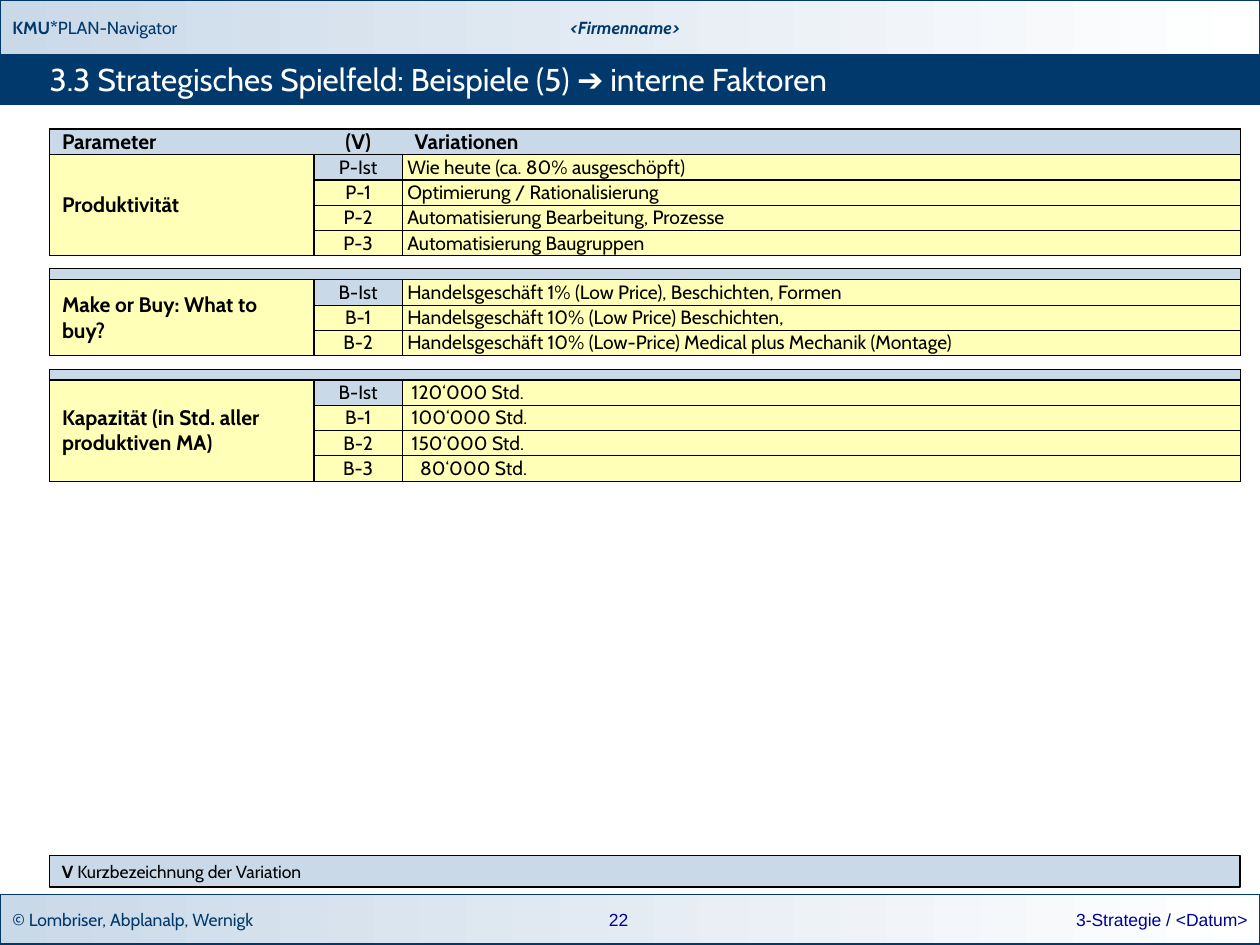
from dataclasses import dataclass
from typing import Optional

from lxml.etree import SubElement
from pptx import Presentation
from pptx.dml.color import RGBColor
from pptx.enum.shapes import MSO_SHAPE as Shape
from pptx.enum.text import MSO_ANCHOR as Anchor, PP_ALIGN as Align
from pptx.oxml.ns import qn
from pptx.util import Cm, Pt

NAVY = RGBColor(0x01, 0x39, 0x6C)
BLUE = RGBColor(0x00, 0x00, 0x99)
PALE = RGBColor(0xCA, 0xD9, 0xE8)
CREAM = RGBColor(0xFF, 0xFF, 0xB7)
BLACK = RGBColor(0, 0, 0)
WHITE = RGBColor(255, 255, 255)

WIDE, TALL = 25.4, 19.05
LEFT, COLS = 1.0, (5.33, 1.78, 16.89)
ROW, THIN, GAP = 0.51, 0.22, 0.27
PAD, TIGHT = 0.25, 0.1


@dataclass
class Box:
    left: float
    top: float
    width: float
    height: float


@dataclass
class Item:
    code: str
    text: str
    indent: float = 0


@dataclass
class Block:
    name: str
    items: list[Item]
    head: Optional[tuple[str, ...]] = None


BLOCKS = [
    Block("Produktivität", [
        Item("P-Ist", "Wie heute (ca. 80% ausgeschöpft)"),
        Item("P-1", "Optimierung / Rationalisierung"),
        Item("P-2", "Automatisierung Bearbeitung, Prozesse"),
        Item("P-3", "Automatisierung Baugruppen"),
    ], ("Parameter", "(V)", "Variationen")),
    Block("Make or Buy: What to buy?", [
        Item("B-Ist", "Handelsgeschäft 1% (Low Price), Beschichten, Formen"),
        Item("B-1", "Handelsgeschäft 10% (Low Price) Beschichten,"),
        Item("B-2", "Handelsgeschäft 10% (Low-Price) Medical plus Mechanik (Montage)"),
    ]),
    Block("Kapazität (in Std. aller produktiven MA)", [
        Item("B-Ist", "120‘000 Std.", 0.09),
        Item("B-1", "100‘000 Std.", 0.09),
        Item("B-2", "150‘000 Std.", 0.09),
        Item("B-3", "80‘000 Std.", 0.26),
    ]),
]


def place(box: Box) -> list[Cm]:
    return [Cm(box.left), Cm(box.top), Cm(box.width), Cm(box.height)]


def style(para, size: float, color: RGBColor, face: str = "Cabin",
          bold: bool = False, align=Align.LEFT) -> None:
    para.alignment = align
    font = para.font
    font.name, font.size, font.bold = face, Pt(size), bold
    font.color.rgb = color


def add_bar(slide, box: Box, edge: RGBColor, fill: Optional[RGBColor] = None):
    """Draw a bar; without a fill colour it fades from pale blue to white."""
    bar = slide.shapes.add_shape(Shape.RECTANGLE, *place(box))
    bar.shadow.inherit = False
    bar.line.color.rgb, bar.line.width = edge, Pt(0.75)
    if fill is not None:
        bar.fill.solid()
        bar.fill.fore_color.rgb = fill
    else:
        bar.fill.gradient()
        bar.fill.gradient_angle = 0
        for stop, color in zip(bar.fill.gradient_stops, (PALE, WHITE)):
            stop.color.rgb = color
    bar.text_frame.vertical_anchor = Anchor.MIDDLE
    return bar


def add_runs(shape, lead: str, rest: str, color: RGBColor) -> None:
    para = shape.text_frame.paragraphs[0]
    style(para, 10, color)
    for text, bold in ((lead, True), (rest, False)):
        run = para.add_run()
        run.text, run.font.bold = text, bold


def add_label(slide, box: Box, text: str, color: RGBColor, face: str, align):
    frame = slide.shapes.add_textbox(*place(box)).text_frame
    frame.word_wrap, frame.vertical_anchor = True, Anchor.MIDDLE
    para = frame.paragraphs[0]
    para.text = text
    style(para, 10, color, face, align=align)
    return para


def set_cell(cell, text: str, fill: RGBColor, sides: str = "LRTB",
             size: float = 11, bold: bool = False, align=Align.LEFT,
             pad: float = TIGHT, indent: float = 0) -> None:
    props = cell._tc.get_or_add_tcPr()
    for side in "LRTB":
        line = SubElement(props, qn(f"a:ln{side}"), w=str(Pt(0.75)))
        if side in sides:
            paint = SubElement(line, qn("a:solidFill"))
            SubElement(paint, qn("a:srgbClr"), val=str(BLACK))
        else:
            SubElement(line, qn("a:noFill"))
    cell.fill.solid()
    cell.fill.fore_color.rgb = fill
    cell.vertical_anchor = Anchor.MIDDLE
    cell.margin_left, cell.margin_right = Cm(pad + indent), Cm(pad)
    cell.margin_top = cell.margin_bottom = 0
    para = cell.text_frame.paragraphs[0]
    if text:
        para.text = text
        style(para, size, BLACK, bold=bold, align=align)
    else:
        SubElement(para._p, qn("a:endParaRPr"), sz="400")


def add_block(slide, block: Block, top: float) -> float:
    """Draw one parameter table and return its lower edge."""
    count = len(block.items)
    first = ROW if block.head else THIN
    high = first + count * ROW
    box = Box(LEFT, top, sum(COLS), high)
    table = slide.shapes.add_table(count + 1, len(COLS), *place(box)).table
    table.first_row = table.horz_banding = False
    for col, width in zip(table.columns, COLS):
        col.width = Cm(width)
    for num, row in enumerate(table.rows):
        row.height = Cm(ROW if num else first)

    # Header band without inner verticals
    heads = zip(block.head or ("", "", ""), ("LTB", "TB", "RTB"),
                (Align.LEFT, Align.CENTER, Align.LEFT))
    for col, (text, sides, align) in enumerate(heads):
        set_cell(table.cell(0, col), text, PALE, sides, 12, True, align, PAD)

    # Parameter name, then its variations
    table.cell(1, 0).merge(table.cell(count, 0))
    for num, item in enumerate(block.items, 1):
        set_cell(table.cell(num, 0), block.name if num == 1 else "", CREAM,
                 size=12, bold=True, pad=PAD)
        set_cell(table.cell(num, 1), item.code, PALE if num == 1 else CREAM,
                 align=Align.CENTER)
        set_cell(table.cell(num, 2), item.text, CREAM, indent=item.indent)
    return top + high


def main() -> None:
    prs = Presentation()
    prs.slide_width, prs.slide_height = Cm(WIDE), Cm(TALL)
    slide = prs.slides.add_slide(prs.slide_layouts[5])
    title = slide.shapes.title

    # Footer and header bands
    foot = add_bar(slide, Box(0, 18.03, WIDE, 1), NAVY)
    para = foot.text_frame.paragraphs[0]
    para.text = "© Lombriser, Abplanalp, Wernigk"
    style(para, 10, NAVY)
    head = add_bar(slide, Box(0, 0, WIDE, 1.1), NAVY)
    add_runs(head, "KMU*", "PLAN-Navigator", NAVY)
    add_bar(slide, Box(0, 1.1, WIDE, 1), NAVY, NAVY)
    firm = add_label(slide, Box(8.1, 0, 9, 1.12), "<Firmenname>", NAVY,
                     "Cabin", Align.CENTER)
    firm.font.bold = firm.font.italic = True
    add_label(slide, Box(17.35, 18.03, 8.05, 1.02), "3-Strategie / <Datum>",
              BLUE, "Arial", Align.RIGHT)
    add_label(slide, Box(11.86, 18.03, 1.22, 1), "22", BLUE, "Arial", Align.CENTER)

    # Title, raised above its band
    slide.shapes._spTree.append(title._element)
    title.left, title.top, title.width, title.height = place(Box(LEFT, 1.1, 23.6, 1))
    frame = title.text_frame
    frame.text = "3.3 Strategisches Spielfeld: Beispiele (5) ➔ interne Faktoren"
    frame.vertical_anchor = Anchor.MIDDLE
    frame.margin_left = frame.margin_right = 0
    frame.margin_top = frame.margin_bottom = 0
    style(frame.paragraphs[0], 18, WHITE)

    # Parameter tables
    top = 2.6
    for block in BLOCKS:
        top = add_block(slide, block, top) + GAP

    # Legend
    note = add_bar(slide, Box(LEFT, 17.25, sum(COLS), 0.63), BLACK, PALE)
    add_runs(note, "V", " Kurzbezeichnung der Variation", BLACK)

    prs.save("out.pptx")


if __name__ == "__main__":
    main()
